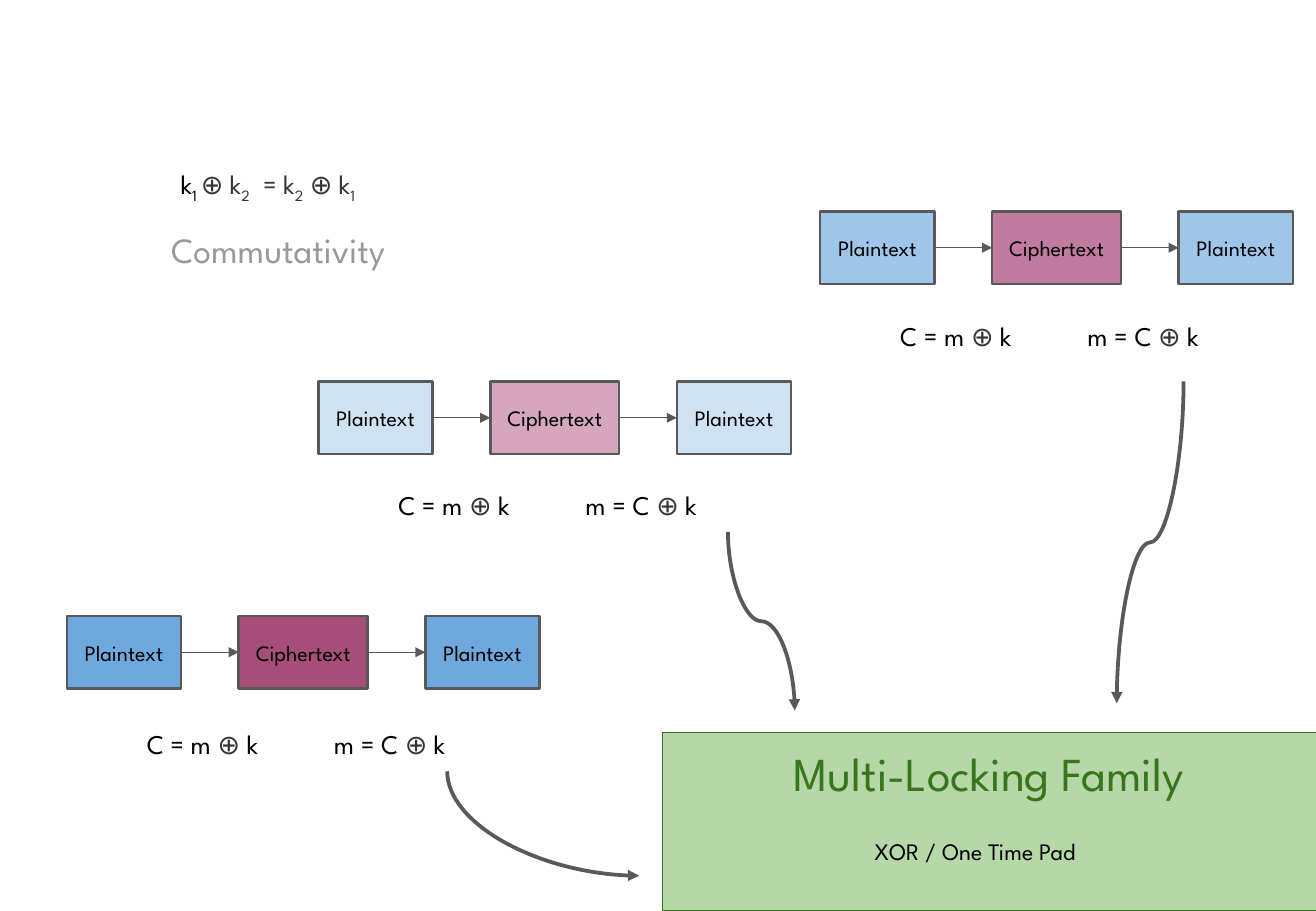
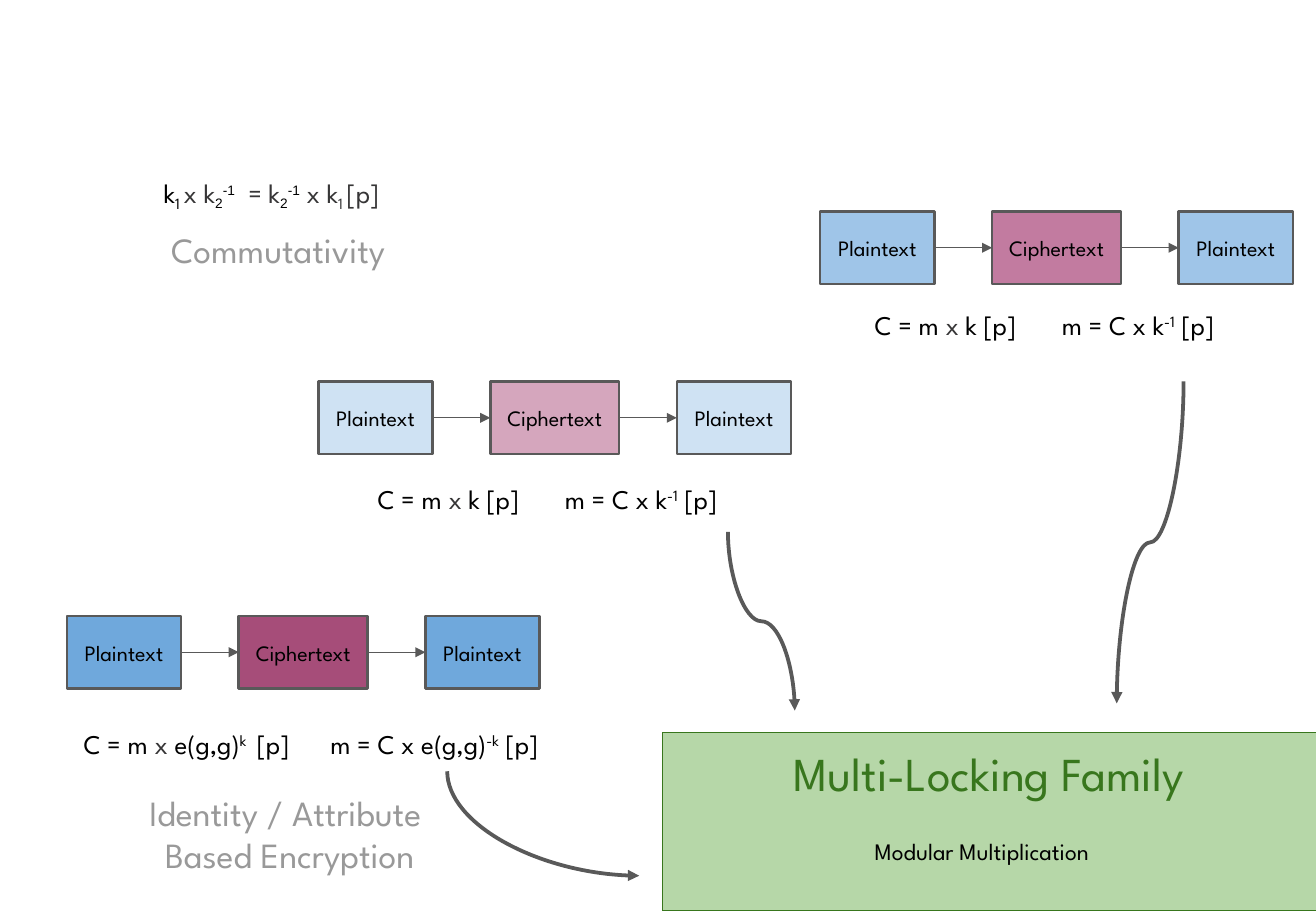
"""Build two slides on the XOR and modular multiplication multi-locking families."""
from lxml import etree
from pptx import Presentation
from pptx.dml.color import RGBColor
from pptx.enum.shapes import MSO_CONNECTOR, MSO_SHAPE
from pptx.enum.text import MSO_ANCHOR, MSO_AUTO_SIZE, PP_ALIGN
from pptx.oxml.ns import qn
from pptx.util import Inches, Pt

RECTANGLE = MSO_SHAPE.RECTANGLE
STRAIGHT, CURVE = MSO_CONNECTOR.STRAIGHT, MSO_CONNECTOR.CURVE
LEFT, CENTER = PP_ALIGN.LEFT, PP_ALIGN.CENTER
TOP, MIDDLE = MSO_ANCHOR.TOP, MSO_ANCHOR.MIDDLE
NO_AUTO_SIZE = MSO_AUTO_SIZE.NONE
RIGHT_SIDE, LEFT_SIDE = 3, 1
TITLE_ONLY = 5

FONT, INDEX_FONT = "League Spartan", "Arial"
BLACK, CHARCOAL, GRAY, OUTLINE = "000000", "373637", "999999", "595959"
GREEN, PALE_GREEN = "38761D", "B6D7A8"
SUB, SUPER = -25, 30

CELL = Inches(0.1)
COLUMNS, ROWS = 108.3, 75
PLAIN_WIDTH, CIPHER_WIDTH, BOX_HEIGHT, GAP = 9.4, 10.6, 6, 4.75
PANEL = (54.5, 60.3, 53.9, 14.7)
TITLE = (60.8, 60.3, 41.1, 6)

CHAINS = [
    (5.5, 50.7, "6FA8DC", "A64D79"),
    (26.2, 31.4, "CFE2F3", "D5A6BD"),
    (67.5, 17.4, "9FC5E8", "C27BA0"),
]
CURVES = [
    ("curvedConnector3", 70, 48.4, 55.3, 53.9, 270),
    ("curvedConnector3", 81.4, 41.9, 107.9, 47.4, 90),
    ("curvedConnector2", 49, 59.9, 40.4, 75.7, 270),
]

XOR_LOCK = [("C = m ", BLACK), ("⊕", CHARCOAL), (" k", BLACK)]
XOR_UNLOCK = [("m = C ", BLACK), ("⊕", CHARCOAL), (" k", BLACK)]
XOR_RULE = [
    ("k", BLACK), ("1 ", BLACK, SUB), ("⊕ k", CHARCOAL), ("2", CHARCOAL, SUB),
    ("  = k", CHARCOAL), ("2", CHARCOAL, SUB), (" ⊕ k", CHARCOAL), ("1", CHARCOAL, SUB),
]
PRODUCT_LOCK = [("C = m ", BLACK), ("x", CHARCOAL), (" k [p]", BLACK)]
PRODUCT_UNLOCK = [("m = C x k", BLACK), ("-1", BLACK, SUPER), (" [p]", BLACK)]
PAIRING_LOCK = [
    ("C = m ", BLACK), ("x", CHARCOAL), (" e(g,g)", BLACK),
    ("k ", BLACK, SUPER), (" [p]", BLACK),
]
PAIRING_UNLOCK = [("m = C x e(g,g)", BLACK), ("-k", BLACK, SUPER), (" [p]", BLACK)]
INVERSE = [("2", BLACK, SUB, 14, INDEX_FONT), ("-1", BLACK, SUPER, 14, INDEX_FONT)]
PRODUCT_RULE = [
    ("k", BLACK), ("1 ", BLACK, SUB), ("x k", CHARCOAL), *INVERSE, ("  = k", CHARCOAL),
    *INVERSE, (" x k", CHARCOAL), ("1 ", CHARCOAL, SUB), ("[p]", CHARCOAL),
]

COMMUTATIVITY = (9.2, 17.8, 28.1, 5.3, 21, CENTER, [[("Commutativity ", GRAY)]])
SLIDES = [
    [
        COMMUTATIVITY,
        (13.9, 12.8, 23.5, 4.6, 16, LEFT, [XOR_RULE]),
        (71, 67.9, 20.9, 3.8, 14, LEFT, [[("XOR / One Time Pad", BLACK)]]),
        *[(left + shift, top, 12.4, 4.6, 16, LEFT, [formula])
          for left, top in [(11.1, 58.9), (31.8, 39.2), (73.1, 25.3)]
          for shift, formula in [(0, XOR_LOCK), (15.4, XOR_UNLOCK)]],
    ],
    [
        COMMUTATIVITY,
        (12.5, 13.5, 22.7, 4.6, 16, LEFT, [PRODUCT_RULE]),
        (71, 67.9, 23.8, 3.8, 14, LEFT, [[("Modular Multiplication", BLACK)]]),
        *[(left + shift, top, width, 4.6, 16, LEFT, [formula])
          for left, top in [(30.1, 38.7), (71, 24.4)]
          for shift, width, formula in [(0, 15.4, PRODUCT_LOCK), (15.4, 17.8, PRODUCT_UNLOCK)]],
        (5.9, 58.9, 22.7, 4.6, 16, LEFT, [PAIRING_LOCK]),
        (26.2, 58.9, 21.2, 4.6, 16, LEFT, [PAIRING_UNLOCK]),
        (9.8, 64.1, 28.1, 5.3, 21, CENTER,
         [[("Identity / Attribute ", GRAY)], [("Based Encryption", GRAY)]]),
    ],
]


def write_text(shape, paragraphs, size, alignment, anchor=TOP):
    """Fill a shape with paragraphs of (text, colour, baseline, size, font) runs."""
    frame = shape.text_frame
    frame.word_wrap = True
    frame.auto_size = NO_AUTO_SIZE
    frame.vertical_anchor = anchor
    frame.margin_left = frame.margin_right = frame.margin_top = frame.margin_bottom = CELL
    for index, runs in enumerate(paragraphs):
        paragraph = frame.add_paragraph() if index else frame.paragraphs[0]
        paragraph.alignment = alignment
        for text, color, *special in runs:
            baseline, run_size, font = special + [0, size, FONT][len(special):]
            run = paragraph.add_run()
            run.text = text
            run.font.size = Pt(run_size)
            run.font.name = font
            run.font.color.rgb = RGBColor.from_string(color)
            if baseline:
                run._r.get_or_add_rPr().set("baseline", str(baseline * 1000))


def add_arrow(slide, kind, ends, weight):
    """Draw an arrow between two grid points and return its connector."""
    arrow = slide.shapes.add_connector(kind, *[int(end * CELL) for end in ends])
    arrow.line.color.rgb = RGBColor.from_string(OUTLINE)
    arrow.line.width = Pt(weight)
    properties = arrow.element.spPr
    etree.SubElement(properties.find(qn("a:ln")), qn("a:tailEnd"), type="triangle")
    etree.SubElement(properties, qn("a:effectLst"))
    return arrow


presentation = Presentation()
presentation.slide_width = int(COLUMNS * CELL)
presentation.slide_height = ROWS * CELL

for text_boxes in SLIDES:
    slide = presentation.slides.add_slide(presentation.slide_layouts[TITLE_ONLY])

    rectangles = [(PANEL, PALE_GREEN, GREEN, 0.75, "")]
    for left, top, plain_color, cipher_color in CHAINS:
        for label, width, color in [
            ("Plaintext", PLAIN_WIDTH, plain_color),
            ("Ciphertext", CIPHER_WIDTH, cipher_color),
            ("Plaintext", PLAIN_WIDTH, plain_color),
        ]:
            rectangles.append(((left, top, width, BOX_HEIGHT), color, OUTLINE, 1.5, label))
            left += width + GAP

    boxes = []
    for place, fill, outline, weight, label in rectangles:
        shape = slide.shapes.add_shape(RECTANGLE, *[int(length * CELL) for length in place])
        shape.shadow.inherit = False
        shape.fill.solid()
        shape.fill.fore_color.rgb = RGBColor.from_string(fill)
        shape.line.color.rgb = RGBColor.from_string(outline)
        shape.line.width = Pt(weight)
        if label:
            write_text(shape, [[(label, BLACK)]], 13, CENTER, MIDDLE)
            boxes.append(shape)

    for first in range(0, len(boxes), 3):
        for source, target in [(first, first + 1), (first + 1, first + 2)]:
            arrow = add_arrow(slide, STRAIGHT, (0, 0, 0, 0), 0.75)
            arrow.begin_connect(boxes[source], RIGHT_SIDE)
            arrow.end_connect(boxes[target], LEFT_SIDE)

    title = slide.shapes.title
    title.left, title.top, title.width, title.height = [int(length * CELL) for length in TITLE]
    write_text(title, [[("Multi-Locking Family", GREEN)]], 28, CENTER)
    title.element.getparent().append(title.element)

    for *place, size, alignment, paragraphs in text_boxes:
        text_box = slide.shapes.add_textbox(*[int(length * CELL) for length in place])
        write_text(text_box, paragraphs, size, alignment)

    for geometry, *ends, angle in CURVES:
        properties = add_arrow(slide, CURVE, ends, 2.25).element.spPr
        properties.find(qn("a:xfrm")).set("rot", str(angle * 60000))
        properties.find(qn("a:prstGeom")).set("prst", geometry)

presentation.save("out.pptx")
